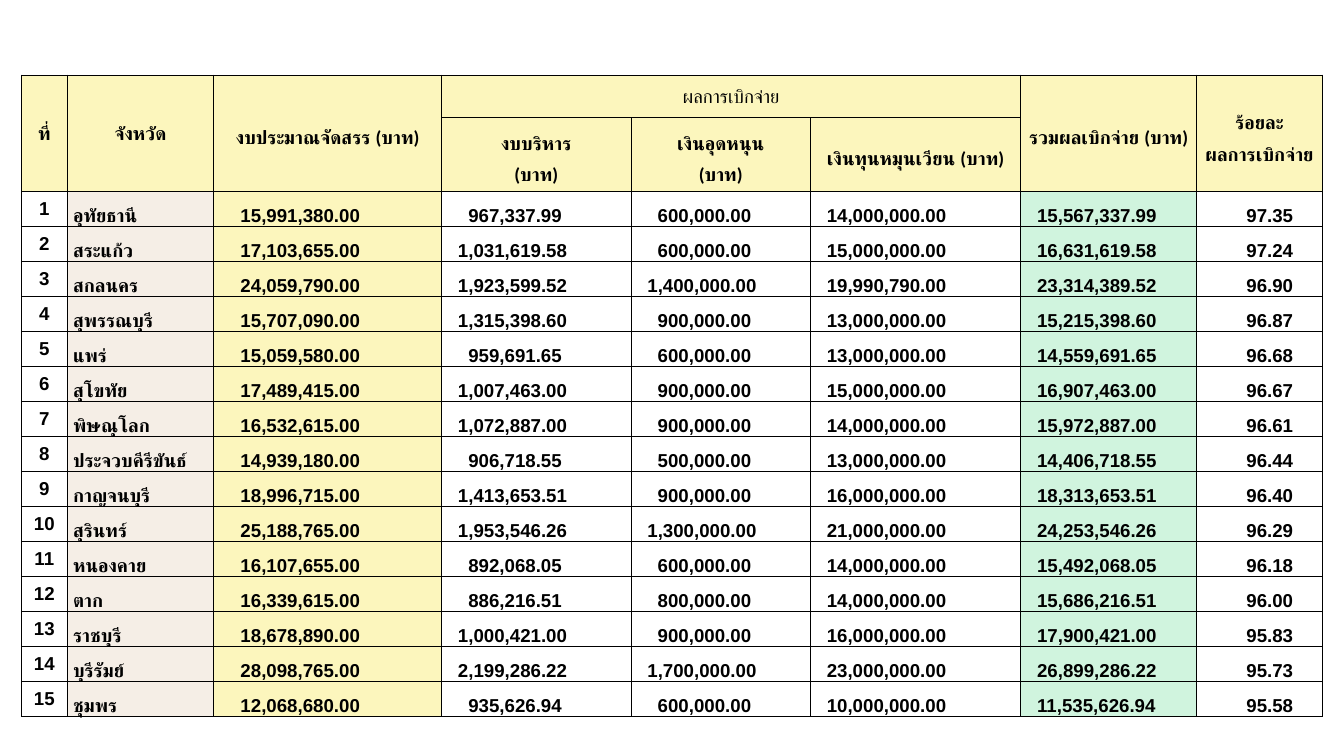
"""Build the provincial budget disbursement table slide."""
from dataclasses import dataclass
from typing import Optional

from lxml.etree import SubElement
from pptx import Presentation
from pptx.dml.color import RGBColor
from pptx.enum.text import MSO_ANCHOR as Anchor, PP_ALIGN as Align
from pptx.oxml.ns import qn
from pptx.table import Table, _Cell as Cell
from pptx.util import Cm, Pt


@dataclass(frozen=True)
class Theme:
    ink: str = "000000"
    yellow: str = "FCF6BD"
    cream: str = "F5EEE6"
    green: str = "D0F4DE"
    header_font: str = "Calibri"
    body_font: str = "Arial"
    size: int = 20
    border: int = 1


@dataclass(frozen=True)
class CellStyle:
    font: str
    fill: Optional[str] = None
    align: Align = Align.LEFT
    anchor: Anchor = Anchor.BOTTOM
    left: float = 0.03
    right: float = 0.03
    top: float = 0.03
    bottom: float = 0
    spacing: Optional[int] = None
    bold: bool = True


@dataclass(frozen=True)
class Heading:
    row: int
    column: int
    lines: tuple[str, ...]
    row_span: int = 1
    column_span: int = 1
    spacing: int = 34
    bold: bool = True


@dataclass(frozen=True)
class Province:
    name: str
    budget: float
    administration: float
    subsidy: float
    revolving_fund: float

    @property
    def total(self) -> float:
        return self.administration + self.subsidy + self.revolving_fund

    @property
    def percent(self) -> float:
        return 100 * self.total / self.budget


THEME = Theme()
TABLE_LEFT, TABLE_TOP, TABLE_HEIGHT = 0.81, 2.84, 24.25
COLUMN_WIDTHS = (1.73, 5.54, 8.61, 7.16, 6.78, 7.95, 6.65, 4.75)
HEADER_HEIGHTS = (1.6, 2.79)
NAME_INDENT, WIDE_INDENT, NARROW_INDENT, PERCENT_INDENT = 0.22, 1.01, 0.62, 0.81

HEADINGS = (
    Heading(0, 0, ("ที่",), row_span=2, spacing=24),
    Heading(0, 1, ("จังหวัด",), row_span=2, spacing=24),
    Heading(0, 2, ("งบประมาณจัดสรร (บาท)",), row_span=2),
    Heading(0, 3, ("ผลการเบิกจ่าย",), column_span=3, spacing=24, bold=False),
    Heading(0, 6, ("รวมผลเบิกจ่าย (บาท)",), row_span=2),
    Heading(0, 7, ("ร้อยละ", "ผลการเบิกจ่าย"), row_span=2),
    Heading(1, 3, ("งบบริหาร", "(บาท)")),
    Heading(1, 4, ("เงินอุดหนุน", "(บาท)")),
    Heading(1, 5, ("เงินทุนหมุนเวียน (บาท)",)),
)

PROVINCES = (
    Province("อุทัยธานี", 15991380, 967337.99, 600000, 14000000),
    Province("สระแก้ว", 17103655, 1031619.58, 600000, 15000000),
    Province("สกลนคร", 24059790, 1923599.52, 1400000, 19990790),
    Province("สุพรรณบุรี", 15707090, 1315398.60, 900000, 13000000),
    Province("แพร่", 15059580, 959691.65, 600000, 13000000),
    Province("สุโขทัย", 17489415, 1007463, 900000, 15000000),
    Province("พิษณุโลก", 16532615, 1072887, 900000, 14000000),
    Province("ประจวบคีรีขันธ์", 14939180, 906718.55, 500000, 13000000),
    Province("กาญจนบุรี", 18996715, 1413653.51, 900000, 16000000),
    Province("สุรินทร์", 25188765, 1953546.26, 1300000, 21000000),
    Province("หนองคาย", 16107655, 892068.05, 600000, 14000000),
    Province("ตาก", 16339615, 886216.51, 800000, 14000000),
    Province("ราชบุรี", 18678890, 1000421, 900000, 16000000),
    Province("บุรีรัมย์", 28098765, 2199286.22, 1700000, 23000000),
    Province("ชุมพร", 12068680, 935626.94, 600000, 10000000),
)


def add_borders(cell: Cell) -> None:
    properties = cell._tc.get_or_add_tcPr()
    for side in ("lnL", "lnR", "lnT", "lnB"):
        line = SubElement(properties, qn(f"a:{side}"), w=str(Pt(THEME.border)))
        fill = SubElement(line, qn("a:solidFill"))
        SubElement(fill, qn("a:srgbClr"), val=THEME.ink)


def fill_cell(cell: Cell, lines: tuple[str, ...], style: CellStyle) -> None:
    cell.vertical_anchor = style.anchor
    cell.margin_left, cell.margin_right = Cm(style.left), Cm(style.right)
    cell.margin_top, cell.margin_bottom = Cm(style.top), Cm(style.bottom)
    if style.fill:
        cell.fill.solid()
        cell.fill.fore_color.rgb = RGBColor.from_string(style.fill)
    else:
        cell.fill.background()
    frame = cell.text_frame
    for index, line in enumerate(lines):
        paragraph = frame.add_paragraph() if index else frame.paragraphs[0]
        paragraph.alignment = style.align
        if style.spacing:
            paragraph.line_spacing = Pt(style.spacing)
        run = paragraph.add_run()
        run.text = line
        run.font.name = style.font
        run.font.size = Pt(THEME.size)
        run.font.bold = style.bold
        run.font.color.rgb = RGBColor.from_string(THEME.ink)


def draw_heading(table: Table, heading: Heading) -> None:
    cell = table.cell(heading.row, heading.column)
    if heading.row_span * heading.column_span > 1:
        last_row = heading.row + heading.row_span - 1
        last_column = heading.column + heading.column_span - 1
        cell.merge(table.cell(last_row, last_column))
    style = CellStyle(THEME.header_font, THEME.yellow, Align.CENTER, Anchor.MIDDLE,
                      0.13, 0.13, 0.13, 0.13, heading.spacing, heading.bold)
    fill_cell(cell, heading.lines, style)


def amount_style(amount: float) -> CellStyle:
    indent = WIDE_INDENT if amount < 1_000_000 else NARROW_INDENT
    return CellStyle(THEME.body_font, left=indent)


def draw_province(table: Table, number: int, province: Province) -> None:
    font = THEME.body_font
    spending = (province.administration, province.subsidy, province.revolving_fund)
    entries = (
        (str(number), CellStyle(font, align=Align.CENTER, anchor=Anchor.MIDDLE)),
        (province.name, CellStyle(font, THEME.cream, left=NAME_INDENT)),
        (f"{province.budget:,.2f}", CellStyle(font, THEME.yellow, left=WIDE_INDENT)),
        *((f"{amount:,.2f}", amount_style(amount)) for amount in spending),
        (f"{province.total:,.2f}", CellStyle(font, THEME.green, left=NARROW_INDENT)),
        (f"{province.percent:.2f}",
         CellStyle(font, align=Align.CENTER, left=PERCENT_INDENT)),
    )
    row = len(HEADER_HEIGHTS) + number - 1
    for column, (text, style) in enumerate(entries):
        fill_cell(table.cell(row, column), (text,), style)


def main() -> None:
    presentation = Presentation()
    presentation.slide_width, presentation.slide_height = Cm(50.8), Cm(28.58)
    slide = presentation.slides.add_slide(presentation.slide_layouts[6])
    row_count = len(HEADER_HEIGHTS) + len(PROVINCES)
    shape = slide.shapes.add_table(
        row_count, len(COLUMN_WIDTHS), Cm(TABLE_LEFT), Cm(TABLE_TOP),
        Cm(sum(COLUMN_WIDTHS)), Cm(TABLE_HEIGHT))
    table = shape.table
    table.first_row = table.horz_banding = False
    for column, width in zip(table.columns, COLUMN_WIDTHS):
        column.width = Cm(width)
    body_height = (TABLE_HEIGHT - sum(HEADER_HEIGHTS)) / len(PROVINCES)
    heights = HEADER_HEIGHTS + (body_height,) * len(PROVINCES)
    for row, height in zip(table.rows, heights):
        row.height = Cm(height)
    for cell in table.iter_cells():
        add_borders(cell)
    for heading in HEADINGS:
        draw_heading(table, heading)
    for number, province in enumerate(PROVINCES, start=1):
        draw_province(table, number, province)
    presentation.save("out.pptx")


if __name__ == "__main__":
    main()
